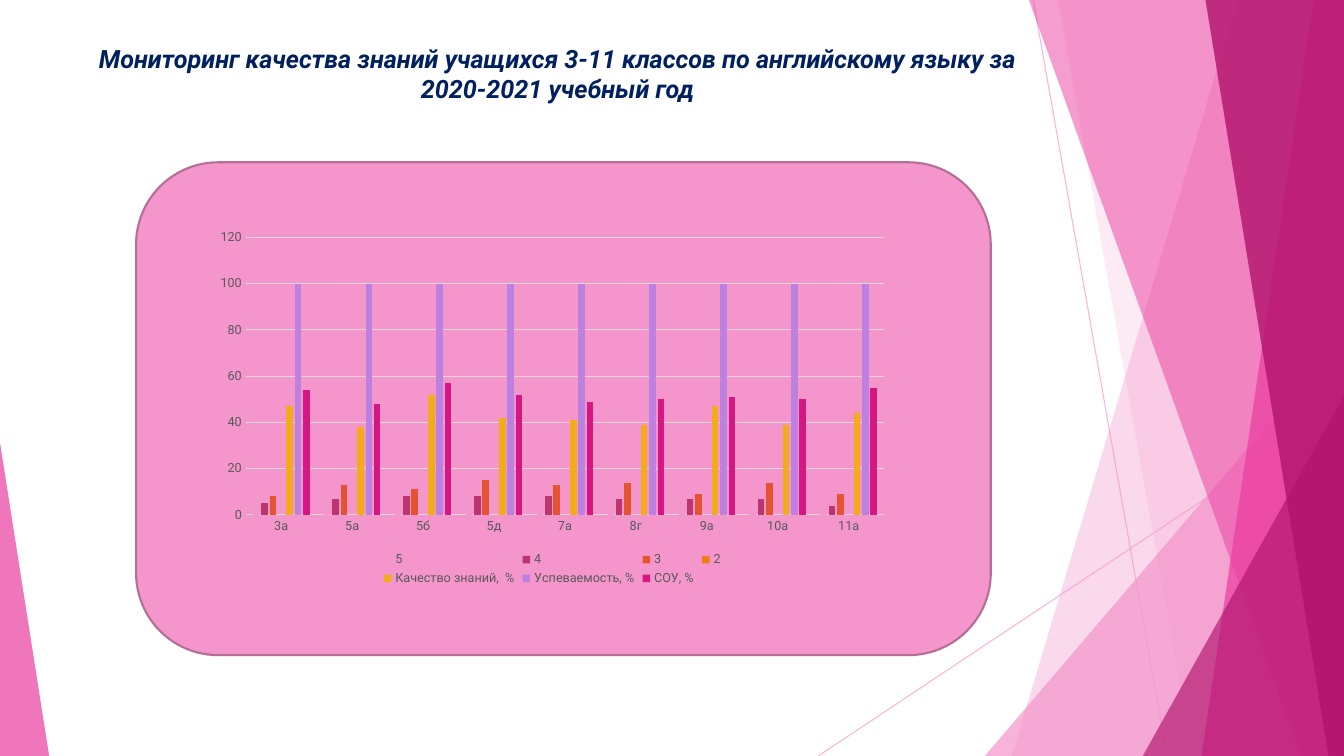
import pptx
import pptx.chart.data
import pptx.dml.color
import pptx.enum.chart
import pptx.enum.shapes
import pptx.enum.text
import pptx.oxml.ns
import pptx.util
from lxml import etree
from pptx.util import Cm, Pt

FONT = "Roboto"
WIDTH, HEIGHT = 33.87, 19.05  # slide size in cm
LIGHT, MIDDLE, DARK = "F496CB", "EB3D9F", "B2136D"
GRAY, GRID = "595959", "D9D9D9"

CLASSES = ["3а", "5а", "5б", "5д", "7а", "8г", "9а", "10а", "11а"]
SERIES = [  # name, colour, values by class
    ("5", LIGHT, [2, 1, 4, 3, 1, 2, 1, 2, 3]),
    ("4", "BC356F", [5, 7, 8, 8, 8, 7, 7, 7, 4]),
    ("3", "E65331", [8, 13, 11, 15, 13, 14, 9, 14, 9]),
    ("2", "F27E19", [None] * len(CLASSES)),
    ("Качество знаний,  %", "F2AC19", [47, 38, 52, 42, 41, 39, 47, 39, 44]),
    ("Успеваемость, %", "BC80E0", [100] * len(CLASSES)),
    ("СОУ, %", "D61682", [54, 48, 57, 52, 49, 50, 51, 50, 55]),
]


def rgb(color):
    return pptx.dml.color.RGBColor.from_string(color)


def set_alpha(color_format_owner, percent):
    """Make the solid colour under the given XML element translucent."""
    color = color_format_owner.find(".//" + pptx.oxml.ns.qn("a:srgbClr"))
    alpha = etree.SubElement(color, pptx.oxml.ns.qn("a:alpha"))
    alpha.set("val", str(percent * 1000))


def paint(shape, color, alpha=None):
    shape.shadow.inherit = False
    shape.fill.solid()
    shape.fill.fore_color.rgb = rgb(color)
    if alpha is not None:
        set_alpha(shape._element.spPr, alpha)
    shape.line.fill.background()


def add_ray(slide, x1, y1, x2, y2):
    ray = slide.shapes.add_connector(
        pptx.enum.shapes.MSO_CONNECTOR.STRAIGHT, Cm(x1), Cm(y1), Cm(x2), Cm(y2))
    ray.line.color.rgb = rgb(LIGHT)
    ray.line.width = Pt(0.75)
    properties = ray._element.spPr
    set_alpha(properties, 70)
    etree.SubElement(properties, pptx.oxml.ns.qn("a:effectLst"))


def add_ribbon(slide, top_x, bottom_x, color, alpha):
    """Full-height band from a slanted left edge to the right slide edge."""
    builder = slide.shapes.build_freeform(Cm(top_x), 0)
    corners = [(WIDTH, 0), (WIDTH, HEIGHT), (bottom_x, HEIGHT)]
    builder.add_line_segments([(Cm(x), Cm(y)) for x, y in corners], close=True)
    paint(builder.convert_to_shape(), color, alpha)


def add_corner(slide, left, top, width, apex, color, alpha):
    """Right triangle standing on the bottom edge of the slide."""
    triangle = slide.shapes.add_shape(
        pptx.enum.shapes.MSO_SHAPE.ISOSCELES_TRIANGLE,
        Cm(left), Cm(top), Cm(width), Cm(HEIGHT - top))
    triangle.adjustments[0] = apex
    paint(triangle, color, alpha)


def add_decoration(slide):
    add_ray(slide, 26.04, 0, 29.41, HEIGHT)
    add_ray(slide, WIDTH, 10.24, 20.62, HEIGHT)
    add_ribbon(slide, 31.19, 25.5, LIGHT, 36)
    add_ribbon(slide, 26.67, 30.05, LIGHT, 20)
    add_corner(slide, 24.82, 8.46, 9.05, 1, LIGHT, 72)
    add_ribbon(slide, 25.93, 32.79, MIDDLE, 50)
    add_ribbon(slide, 33.1, 30.28, MIDDLE, 70)
    add_ribbon(slide, 30.38, 33.48, DARK, 80)
    add_corner(slide, 28.8, 9.98, 5.07, 1, DARK, 66)
    add_corner(slide, 0, 11.15, 1.24, 0, MIDDLE, 70)


def format_font(font, size, color):
    font.name = FONT
    font.size = Pt(size)
    font.color.rgb = rgb(color)


def set_title(slide, text):
    title = slide.shapes.title
    title.left, title.top = Cm(2.11), Cm(0.97)
    title.width, title.height = Cm(23.88), Cm(2.49)
    frame = title.text_frame
    frame.text = text
    frame.word_wrap = True
    frame.auto_size = pptx.enum.text.MSO_AUTO_SIZE.NONE
    frame.vertical_anchor = pptx.enum.text.MSO_ANCHOR.TOP
    paragraph = frame.paragraphs[0]
    paragraph.alignment = pptx.enum.text.PP_ALIGN.CENTER
    font = paragraph.runs[0].font
    format_font(font, 18, "002060")
    font.bold = font.italic = True


def add_panel(slide):
    panel = slide.shapes.add_shape(
        pptx.enum.shapes.MSO_SHAPE.ROUNDED_RECTANGLE,
        Cm(3.43), Cm(4.09), Cm(21.54), Cm(12.42))
    paint(panel, LIGHT)
    panel.line.color.rgb = rgb("B56F96")
    panel.line.width = Pt(1.5)


def format_axis(axis):
    axis.major_tick_mark = pptx.enum.chart.XL_TICK_MARK.NONE
    axis.minor_tick_mark = pptx.enum.chart.XL_TICK_MARK.NONE
    format_font(axis.tick_labels.font, 9, GRAY)


def format_line(line):
    line.color.rgb = rgb(GRID)
    line.width = Pt(0.75)


def add_results_chart(slide):
    data = pptx.chart.data.CategoryChartData()
    data.categories = CLASSES
    for name, _, values in SERIES:
        data.add_series(name, values)
    chart = slide.shapes.add_chart(
        pptx.enum.chart.XL_CHART_TYPE.COLUMN_CLUSTERED,
        Cm(5.21), Cm(5.61), Cm(17.42), Cm(9.25), data).chart
    chart.has_title = False
    format_font(chart.font, 10, "000000")

    # Columns
    plot = chart.plots[0]
    plot.vary_by_categories = False
    plot.gap_width, plot.overlap = 219, -27
    for series, (_, color, _) in zip(plot.series, SERIES):
        series.format.fill.solid()
        series.format.fill.fore_color.rgb = rgb(color)

    # Axes
    format_axis(chart.category_axis)
    format_line(chart.category_axis.format.line)
    value_axis = chart.value_axis
    format_axis(value_axis)
    value_axis.minimum_scale, value_axis.maximum_scale = 0, 120
    value_axis.major_unit = 20
    value_axis.format.line.fill.background()
    format_line(value_axis.major_gridlines.format.line)

    # Legend
    chart.has_legend = True
    chart.legend.position = pptx.enum.chart.XL_LEGEND_POSITION.BOTTOM
    chart.legend.include_in_layout = False
    format_font(chart.legend.font, 9, GRAY)


def main():
    presentation = pptx.Presentation()
    presentation.slide_width, presentation.slide_height = Cm(WIDTH), Cm(HEIGHT)
    slide = presentation.slides.add_slide(presentation.slide_layouts[5])
    add_decoration(slide)
    set_title(slide, "Мониторинг качества знаний учащихся 3-11 классов "
                     "по английскому языку за 2020-2021 учебный год")
    add_panel(slide)
    add_results_chart(slide)
    presentation.save("out.pptx")


if __name__ == "__main__":
    main()
